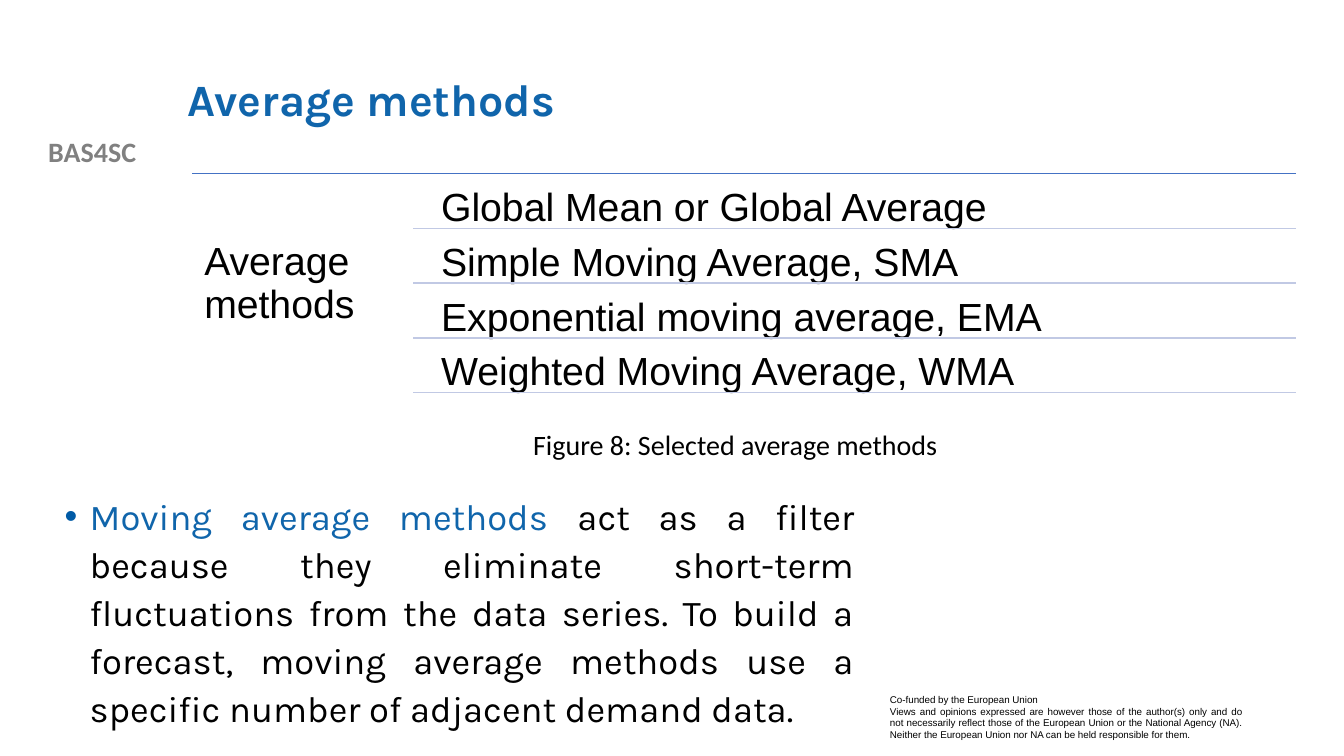
from pptx import Presentation
from pptx.dml.color import RGBColor
from pptx.enum.shapes import MSO_CONNECTOR, MSO_SHAPE
from pptx.enum.text import MSO_ANCHOR as Anchor, MSO_AUTO_SIZE as AutoSize, PP_ALIGN as Align
from pptx.oxml.ns import qn
from pptx.util import Pt
from lxml.etree import SubElement

BLUE, BLACK = "1065AB", "000000"
METHODS = [
    "Global Mean or Global Average",
    "Simple Moving Average, SMA",
    "Exponential moving average, EMA",
    "Weighted Moving Average, WMA",
]


def color(hex_value):
    return RGBColor.from_string(hex_value)


def set_format(target, values):
    for name, value in values.items():
        setattr(target, name, value)


def place(shape, left, top, width, height):
    set_format(shape, dict(left=Pt(left), top=Pt(top), width=Pt(width), height=Pt(height)))


def set_frame(shape, anchor=Anchor.TOP, inset=None):
    frame = shape.text_frame
    set_format(frame, dict(word_wrap=True, auto_size=AutoSize.NONE, vertical_anchor=anchor))
    if inset is not None:
        sides = ("left", "top", "right", "bottom")
        set_format(frame, {f"margin_{side}": Pt(inset) for side in sides})
    return frame


def add_run(paragraph, text, font, size, hex_value=BLACK, bold=False):
    run = paragraph.add_run()
    run.text = text
    set_format(run.font, dict(name=font, size=Pt(size), bold=bold))
    run.font.color.rgb = color(hex_value)


def add_text(slide, box, text, font, size, hex_value=BLACK, bold=False,
             align=Align.LEFT, spacing=1.0, anchor=Anchor.TOP, inset=None):
    shape = slide.shapes.add_textbox(*map(Pt, box))
    paragraph = set_frame(shape, anchor, inset).paragraphs[0]
    set_format(paragraph, dict(alignment=align, line_spacing=spacing))
    add_run(paragraph, text, font, size, hex_value, bold)


def add_rule(slide, left, right, top, hex_value):
    line = slide.shapes.add_connector(MSO_CONNECTOR.STRAIGHT, Pt(left), Pt(top), Pt(right), Pt(top))
    line.line.color.rgb = color(hex_value)
    line.line.width = Pt(1)
    SubElement(line._element.spPr, qn("a:effectLst"))


def add_disclaimer(slide, box):
    shape = slide.shapes.add_shape(MSO_SHAPE.RECTANGLE, *map(Pt, box))
    shape.shadow.inherit = False
    shape.fill.solid()
    shape.fill.fore_color.rgb = color("FFFFFF")
    shape.line.fill.background()
    frame = set_frame(shape)
    texts = [
        "Co-funded by the European Union",
        "Views and opinions expressed are however those of the author(s) only and do not "
        "necessarily reflect those of the European Union or the National Agency (NA). "
        "Neither the European Union nor NA can be held responsible for them.",
    ]
    for index, text in enumerate(texts):
        paragraph = frame.add_paragraph() if index else frame.paragraphs[0]
        paragraph.alignment = Align.JUSTIFY
        add_run(paragraph, text, "Arial", 7)


def fill_title(title, box):
    place(title, *box)
    paragraph = set_frame(title, Anchor.MIDDLE).paragraphs[0]
    set_format(paragraph, dict(alignment=Align.LEFT, line_spacing=0.9))
    add_run(paragraph, "Average methods", "Karla", 32, BLUE, True)


def fill_body(body, box):
    place(body, *box)
    paragraph = set_frame(body).paragraphs[0]
    set_format(paragraph, dict(alignment=Align.JUSTIFY, line_spacing=1.1, space_before=Pt(0)))
    properties = paragraph._p.get_or_add_pPr()
    properties.set("marL", str(Pt(18)))
    properties.set("indent", str(-Pt(18)))
    bullet_color = SubElement(properties, qn("a:buClr"))
    SubElement(bullet_color, qn("a:srgbClr"), val="015BA6")
    SubElement(properties, qn("a:buFont"), typeface="Arial")
    SubElement(properties, qn("a:buChar"), char="•")
    add_run(paragraph, "Moving average methods ", "Karla", 26, BLUE)
    add_run(paragraph, "act as a filter because they eliminate short-term fluctuations from the "
            "data series. To build a forecast, moving average methods use a specific number of "
            "adjacent demand data.", "Karla", 26)


def add_method_list(slide, box):
    """Draw the heading on the left and one underlined row per method on the right."""
    left, top, width, height = box
    right = left + width
    rule_left, text_left = left + 157.7, left + 169.2
    pitch = (height - 2) / len(METHODS)
    style = dict(font="Arial", size=28, spacing=0.9, inset=8.4)
    add_rule(slide, left, right, top, "4472C4")
    add_text(slide, (left, top, 157.7, height), "Average methods", anchor=Anchor.MIDDLE, **style)
    for index, method in enumerate(METHODS):
        row_top = top + 2 + index * pitch
        add_text(slide, (text_left, row_top, right - text_left, 37.4), method, **style)
        add_rule(slide, rule_left, right, row_top + 37.4, "C1C9E4")


def main():
    presentation = Presentation()
    presentation.slide_width, presentation.slide_height = Pt(960), Pt(540)
    slide = presentation.slides.add_slide(presentation.slide_layouts[1])
    add_text(slide, (0, 92.2, 131.8, 31.7), "BAS4SC", "Calibri", 20, "808080", True, Align.CENTER)
    add_disclaimer(slide, (628.6, 491.8, 265.7, 41))
    fill_title(slide.shapes.title, (126.7, 28.8, 767.5, 87.8))
    fill_body(slide.placeholders[1], (38.9, 346.3, 578.9, 174.2))
    add_method_list(slide, (137.5, 123.8, 788.4, 158.4))
    add_text(slide, (373.7, 301.7, 457.2, 31.7), "Figure 8: Selected average methods", "Calibri", 20)
    presentation.save("out.pptx")


if __name__ == "__main__":
    main()
